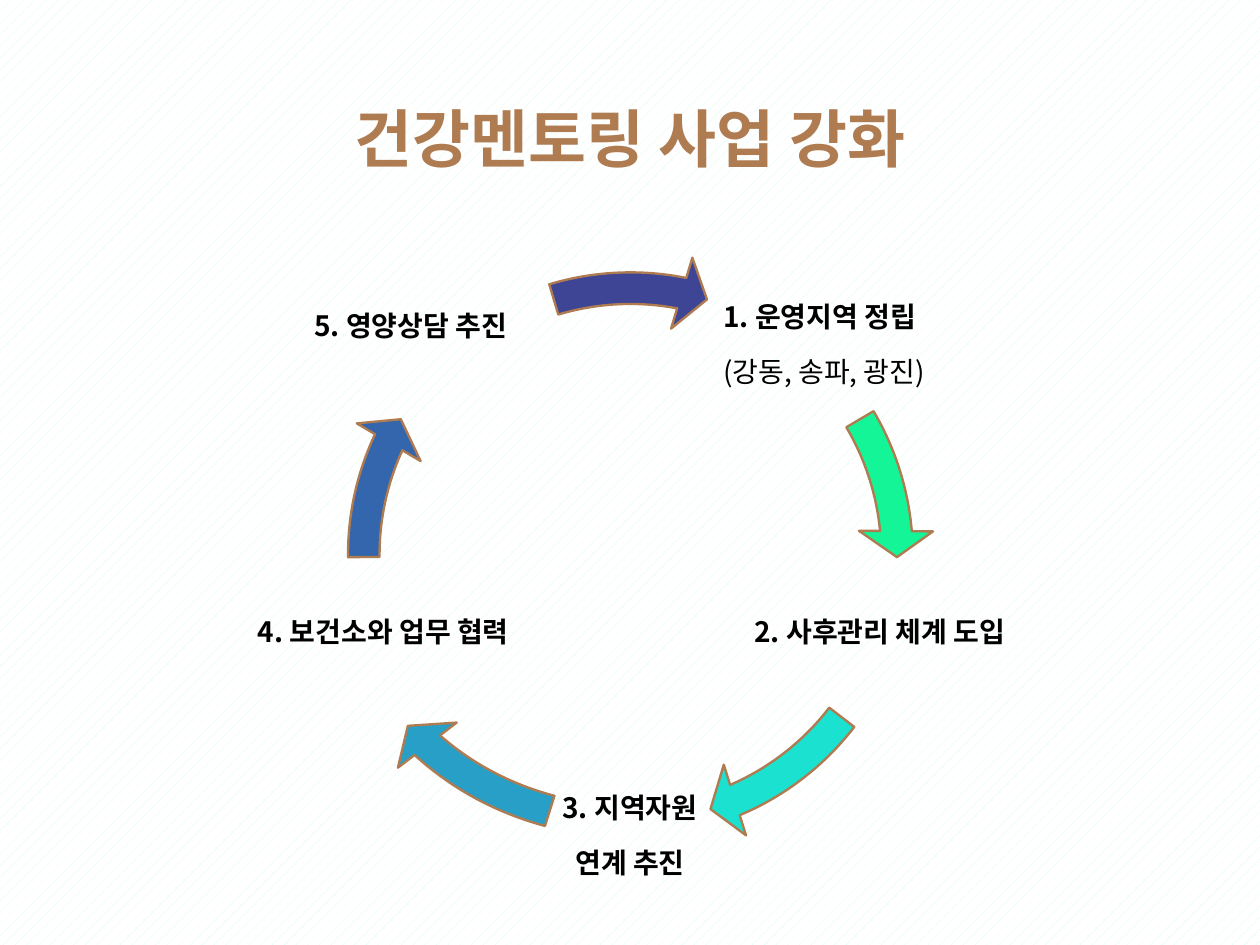
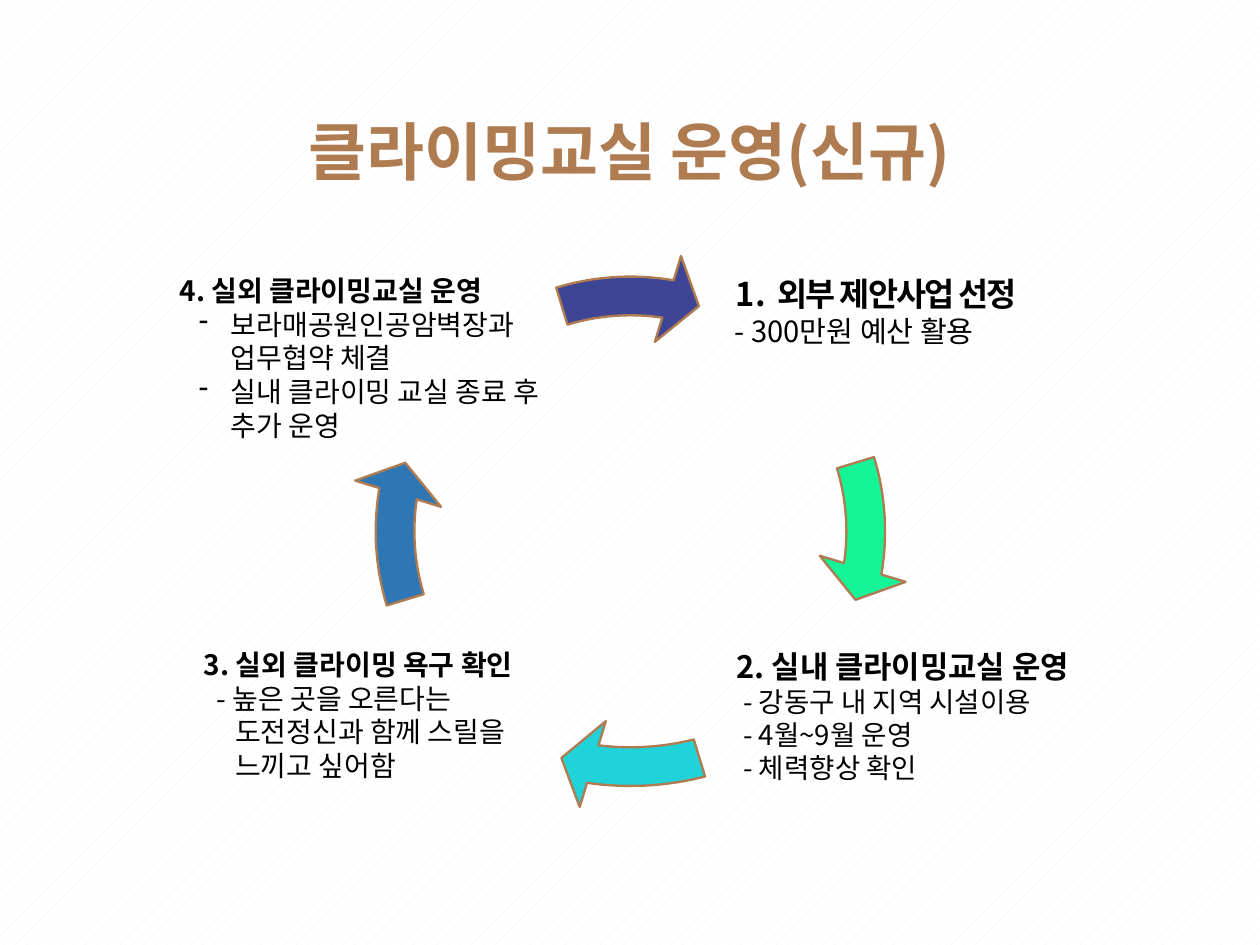
from dataclasses import dataclass

from lxml.etree import SubElement
from pptx import Presentation
from pptx.dml.color import RGBColor
from pptx.enum.dml import MSO_PATTERN
from pptx.enum.shapes import MSO_SHAPE
from pptx.enum.text import MSO_ANCHOR, PP_ALIGN
from pptx.oxml.ns import qn
from pptx.util import Inches, Pt

FONT = "Noto Sans CJK KR"
COLORS = {
    "title": "AF7B51", "text": "000000", "white": "FFFFFF",
    "mint": "D0FDEA", "gray": "F2F2F2",
    "green": "14F597", "aqua": "1AE1D0", "sky": "279FC6", "blue": "3366AC",
    "navy": "3D4594", "cyan": "1FD3D8", "steel": "2F76B4",
}


@dataclass
class Line:
    """One paragraph and its look."""
    text: str
    size: float = 24
    bold: bool = True
    color: str = "text"
    margin: float = 0
    hang: float = 0
    bullet: str = ""
    spacing: float = 0


def rgb(name):
    """Return the named colour."""
    return RGBColor.from_string(COLORS[name])


def set_paragraph(p, line):
    """Write a line into a paragraph with its indent, bullet and font."""
    p.text = line.text
    pPr = p._p.get_or_add_pPr()
    pPr.set("marL", str(Inches(line.margin)))
    pPr.set("indent", str(Inches(-line.hang)))
    if line.bullet:
        clr = SubElement(pPr, qn("a:buClr"))
        SubElement(clr, qn("a:srgbClr"), val=COLORS["text"])
        if line.bullet == "1.":
            SubElement(pPr, qn("a:buAutoNum"), type="arabicPeriod")
        else:
            SubElement(pPr, qn("a:buChar"), char=line.bullet)
    for r in p.runs:
        r.font.size = Pt(line.size)
        r.font.bold = line.bold
        r.font.name = FONT
        r.font.color.rgb = rgb(line.color)
        rPr = r._r.get_or_add_rPr()
        SubElement(rPr, qn("a:ea"), typeface=FONT)
        if line.spacing:
            rPr.set("spc", str(round(line.spacing * 100)))


def add_text(slide, box, lines, align=PP_ALIGN.LEFT, anchor=MSO_ANCHOR.TOP,
             inset=(0.1, 0.05), after=0):
    """Add a wrapped text box that fills the given box."""
    tf = slide.shapes.add_textbox(*map(Inches, box)).text_frame
    tf.word_wrap = True
    tf.vertical_anchor = anchor
    tf.margin_left = tf.margin_right = Inches(inset[0])
    tf.margin_top = tf.margin_bottom = Inches(inset[1])
    for i, line in enumerate(lines):
        p = tf.add_paragraph() if i else tf.paragraphs[0]
        set_paragraph(p, line)
        p.alignment = align
        p.space_after = Pt(after)


def add_title(slide, box, text, **options):
    """Add the centred slide title."""
    line = Line(text, size=54, color="title")
    add_text(slide, box, [line], align=PP_ALIGN.CENTER, **options)


def add_cycle(slide, box, arrows, thickness, head, tip, wide, extra):
    """Add a ring of curved arrows, the one named wide stretched sideways."""
    left, top, width, height = box
    grp = slide.shapes.add_group_shape()
    for color, end, start in arrows:
        dx = extra if color == wide else 0
        area = (left - dx, top, width + 2 * dx, height)
        sp = grp.shapes.add_shape(MSO_SHAPE.CIRCULAR_ARROW, *map(Inches, area))
        for i, value in enumerate((thickness, head, end, start, tip)):
            sp.adjustments[i] = value
        sp.shadow.inherit = False
        sp.fill.solid()
        sp.fill.fore_color.rgb = rgb(color)
        sp.line.color.rgb = rgb("title")
        sp.line.width = Pt(2)


def add_slide(prs, dots):
    """Add a blank slide with a dotted background."""
    slide = prs.slides.add_slide(prs.slide_layouts[6])
    fill = slide.background.fill
    fill.patterned()
    fill.pattern = MSO_PATTERN.PERCENT_5
    fill.fore_color.rgb = rgb(dots)
    fill.back_color.rgb = rgb("white")
    return slide


def mentoring_slide(prs):
    """Build the five-step health mentoring slide."""
    slide = add_slide(prs, "mint")
    inset = (0.15, 0.15)
    add_title(slide, (3.62, 0.89, 7.76, 1.5), "건강멘토링 사업 강화",
              anchor=MSO_ANCHOR.MIDDLE, inset=inset)
    arrows = [("green", 212.94, 197.66), ("aqua", 40.15, 22.53),
              ("sky", 82.11, 64.49), ("blue", 122.98, 107.71),
              ("navy", 168.66, 151.98)]
    add_cycle(slide, (3.89, 2.99, 7.23, 7.23), arrows,
              thickness=0.052, head=3.36, tip=0.061, wide="sky", extra=0.28)
    steps = [
        ((8.17, 3.42, 3.8, 1.63), PP_ALIGN.LEFT,
         [Line("1. 운영지역 정립", margin=0.29),
          Line("(강동, 송파, 광진)", bold=False, margin=0.29)]),
        ((8.83, 7.16, 3.8, 0.75), PP_ALIGN.LEFT, [Line("2. 사후관리 체계 도입")]),
        ((5.6, 9.26, 3.8, 2), PP_ALIGN.CENTER,
         [Line("3. 지역자원"), Line("연계 추진")]),
        ((2.92, 7.17, 3.8, 0.62), PP_ALIGN.LEFT, [Line("4. 보건소와 업무 협력")]),
        ((3.59, 3.52, 3.02, 0.75), PP_ALIGN.LEFT, [Line("5. 영양상담 추진")]),
    ]
    for box, align, lines in steps:
        add_text(slide, box, lines, align=align, inset=inset, after=18)


def climbing_slide(prs):
    """Build the four-step climbing class slide."""
    slide = add_slide(prs, "gray")
    ends = [5.51 + 54 * i for i in range(4)]
    arrows = [(color, end, (end - 15.67) % 216)
              for color, end in zip(("green", "cyan", "steel", "navy"), ends)]
    add_cycle(slide, (4.17, 2.99, 6.67, 6.67), arrows,
              thickness=0.069, head=4.65, tip=0.08, wide="cyan", extra=0.26)
    add_title(slide, (2.04, 1.29, 10.91, 0.93), "클라이밍교실 운영(신규)")
    details = ("- 강동구 내 지역 시설이용", "- 4월~9월 운영", "- 체력향상 확인")
    tasks = ("보라매공원인공암벽장과 업무협약 체결", "실내 클라이밍 교실 종료 후 추가 운영")
    steps = [
        ((8.42, 3.21, 4.25, 2),
         [Line("외부 제안사업 선정", size=28, margin=0.74, hang=0.5,
               bullet="1.", spacing=-1.5),
          Line("- 300만원 예산 활용", size=25, bold=False, margin=0.23)]),
        ((8.67, 7.66, 4.9, 1.99),
         [Line("2. 실내 클라이밍교실 운영", size=26.4)]
         + [Line(t, size=23.6, bold=False, margin=0.08) for t in details]),
        ((2.33, 7.66, 4.94, 1.99),
         [Line("3. 실외 클라이밍 욕구 확인"),
          Line("- 높은 곳을 오른다는", bold=False, margin=0.15),
          Line("도전정신과 함께 스릴을", bold=False, margin=0.37),
          Line("느끼고 싶어함", bold=False, margin=0.37)]),
        ((2.04, 3.21, 4.54, 2.74),
         [Line("4. 실외 클라이밍교실 운영")]
         + [Line(t, bold=False, margin=0.61, hang=0.38, bullet="-")
            for t in tasks]),
    ]
    for box, lines in steps:
        add_text(slide, box, lines)


def main():
    """Build and save the deck."""
    prs = Presentation()
    prs.slide_width = Inches(15)
    prs.slide_height = Inches(11.25)
    mentoring_slide(prs)
    climbing_slide(prs)
    prs.save("out.pptx")


if __name__ == "__main__":
    main()
